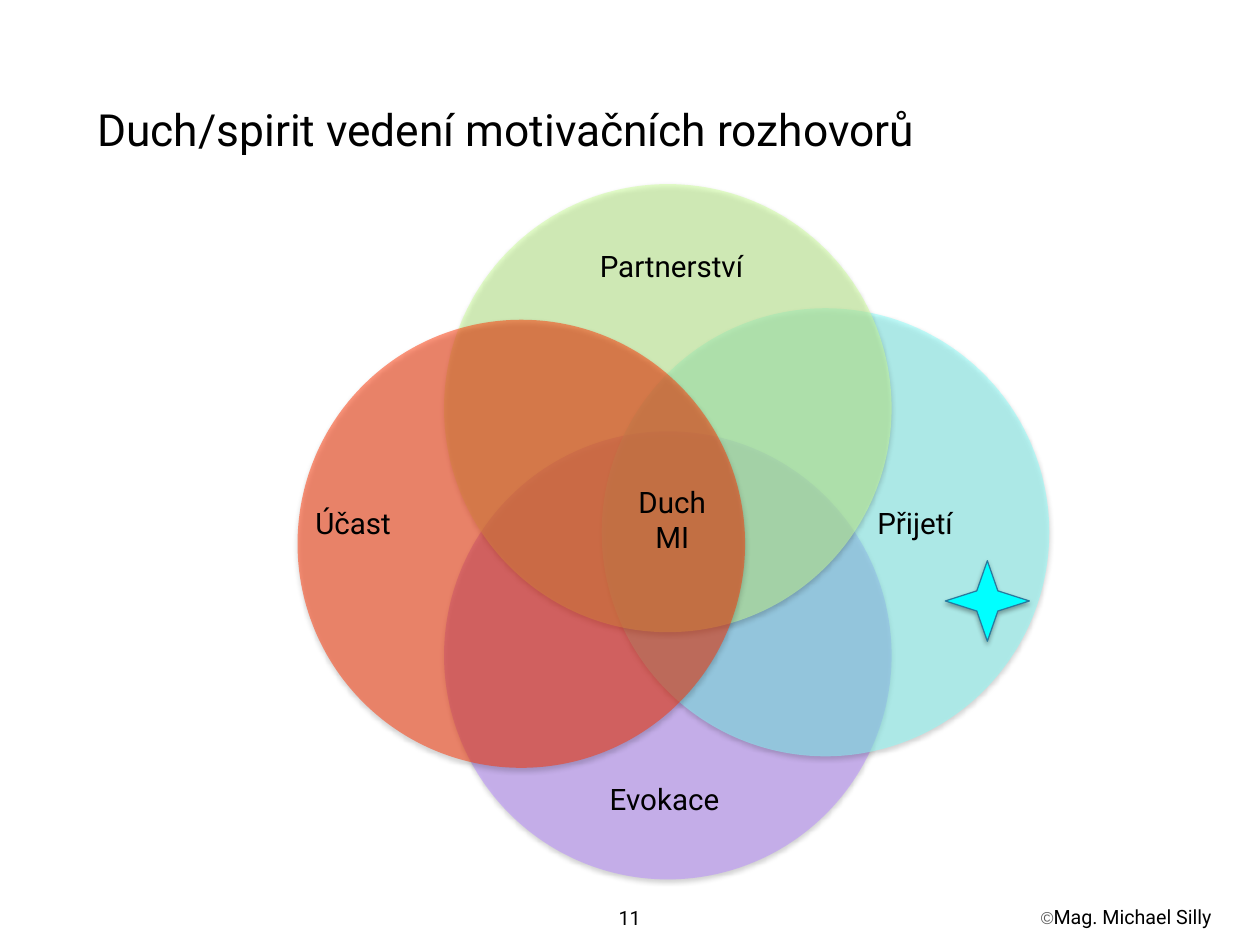
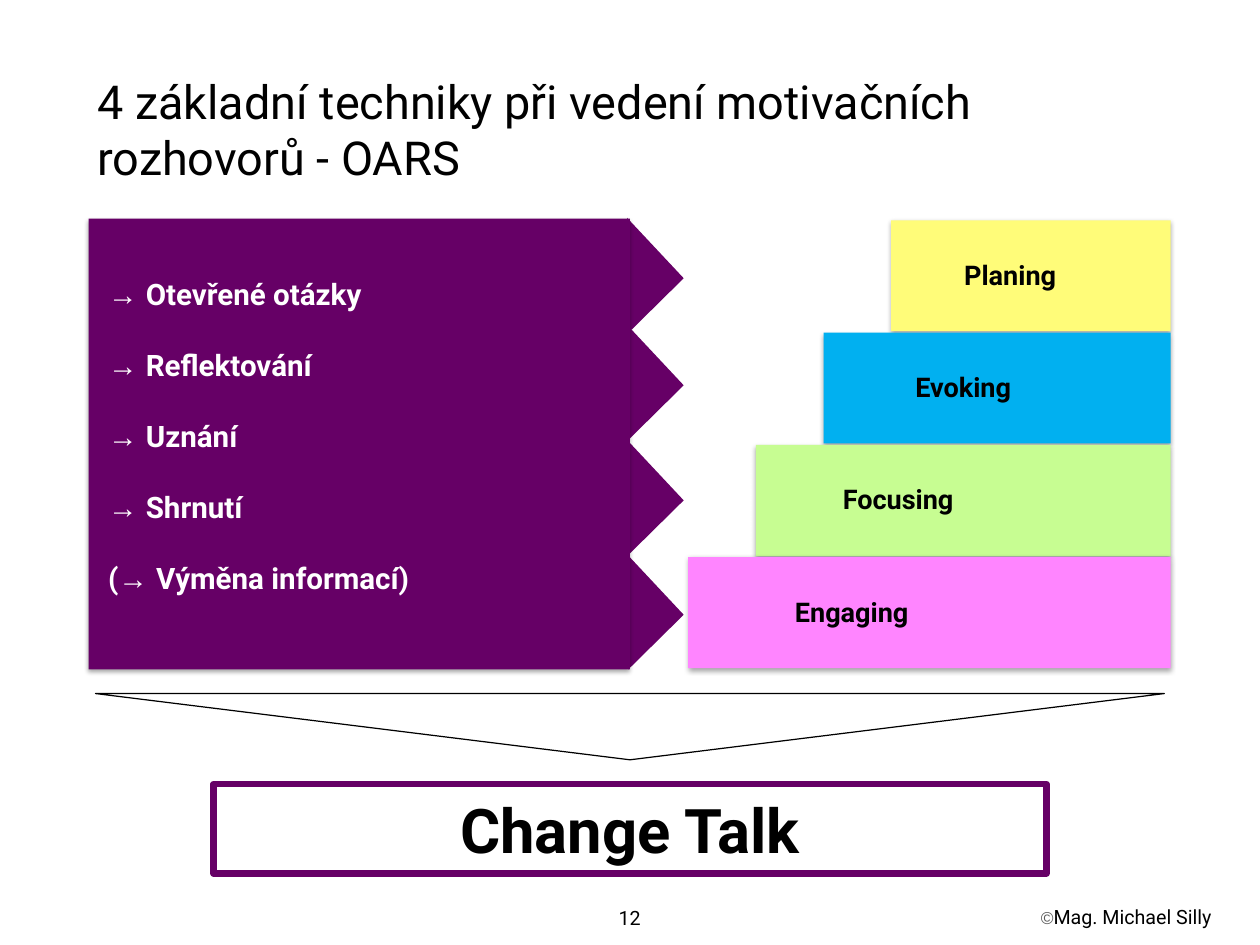
from lxml import etree
from pptx import Presentation
from pptx.dml.color import RGBColor
from pptx.enum.shapes import MSO_SHAPE
from pptx.enum.text import MSO_ANCHOR, MSO_AUTO_SIZE, PP_ALIGN
from pptx.oxml.ns import qn
from pptx.util import Cm, Pt

OVAL, RECT, STAR = MSO_SHAPE.OVAL, MSO_SHAPE.RECTANGLE, MSO_SHAPE.STAR_4_POINT
TOP, MIDDLE = MSO_ANCHOR.TOP, MSO_ANCHOR.MIDDLE
LEFT, CENTER = PP_ALIGN.LEFT, PP_ALIGN.CENTER
NO_FIT = MSO_AUTO_SIZE.NONE
TITLE_ONLY = 5

FONT, SYMBOL_FONT = "Roboto", "Arial"
BLACK = RGBColor(0x00, 0x00, 0x00)
WHITE = RGBColor(0xFF, 0xFF, 0xFF)
GREY = RGBColor(0x59, 0x59, 0x59)
PURPLE = RGBColor(0x66, 0x00, 0x66)
LILAC = RGBColor(0xB9, 0x8D, 0xFF)
AQUA = RGBColor(0x85, 0xFF, 0xFB)
LIME = RGBColor(0xCC, 0xFF, 0x99)
RED = RGBColor(0xFF, 0x33, 0x00)
CYAN = RGBColor(0x00, 0xFF, 0xFF)
STAR_EDGE = RGBColor(0x28, 0x7A, 0x9E)
YELLOW = RGBColor(0xFF, 0xFC, 0x79)
BLUE = RGBColor(0x01, 0xB0, 0xF0)
GREEN = RGBColor(0xC7, 0xFD, 0x92)
PINK = RGBColor(0xFF, 0x85, 0xFF)


def cm_all(*lengths):
    return [Cm(length) for length in lengths]


def write(frame, lines, size=24, font=FONT, color=BLACK, bold=False, align=LEFT,
          anchor=TOP, inset=0.18, wrap=True, gap=0):
    """Each line is a string or a list of (text, run format) pairs."""
    frame.auto_size = NO_FIT
    frame.word_wrap = wrap
    frame.vertical_anchor = anchor
    frame.margin_left = frame.margin_right = Cm(inset)
    frame.margin_top = frame.margin_bottom = Cm(inset)
    base = {"size": size, "font": font, "color": color, "bold": bold}
    for index, line in enumerate(lines):
        paragraph = frame.add_paragraph() if index else frame.paragraphs[0]
        paragraph.alignment = align
        paragraph.space_before = Pt(gap if index else 0)
        for text, changes in ([(line, {})] if isinstance(line, str) else line):
            look = {**base, **changes}
            run = paragraph.add_run()
            run.text = text
            run.font.size = Pt(look["size"])
            run.font.name = look["font"]
            run.font.bold = look["bold"]
            run.font.color.rgb = look["color"]


def add_label(slide, box, *lines, **look):
    write(slide.shapes.add_textbox(*cm_all(*box)).text_frame, lines, **look)


def paint(shape, fill=None, alpha=None, line=None, width=1, shadow=False):
    shape.shadow.inherit = False
    if fill is None:
        shape.fill.background()
    else:
        shape.fill.solid()
        shape.fill.fore_color.rgb = fill
    if alpha is not None:
        tint = shape._element.spPr.find(qn("a:solidFill"))[0]
        etree.SubElement(tint, qn("a:alpha"), val=str(alpha * 1000))
    if line is None:
        shape.line.fill.background()
    else:
        shape.line.color.rgb = line
        shape.line.width = Pt(width)
    if shadow:
        effects = shape._element.spPr.find(qn("a:effectLst"))
        outer = etree.SubElement(effects, qn("a:outerShdw"), blurRad=str(Pt(4)),
                                 dist=str(Pt(2)), dir="5400000", rotWithShape="0")
        shade = etree.SubElement(outer, qn("a:srgbClr"), val=str(BLACK))
        etree.SubElement(shade, qn("a:alpha"), val="35000")


def add_block(slide, kind, box, **look):
    block = slide.shapes.add_shape(kind, *cm_all(*box))
    paint(block, **look)
    return block


def add_polygon(slide, points, **look):
    corners = [cm_all(*point) for point in points]
    builder = slide.shapes.build_freeform(*corners[0], scale=1.0)
    builder.add_line_segments(corners[1:], close=True)
    paint(builder.convert_to_shape(), **look)


def add_page(prs, number, title, title_size):
    slide = prs.slides.add_slide(prs.slide_layouts[TITLE_ONLY])
    heading = slide.shapes.title
    heading.left, heading.top, heading.width, heading.height = cm_all(2.64, 0.71, 30.84, 5.99)
    write(heading.text_frame, [title], size=title_size, anchor=MIDDLE, inset=0.15)
    # Footer: credit and page number
    add_label(slide, (29.69, 25.73, 5.31, 1.09),
              [("©️", {"size": 14, "font": SYMBOL_FONT, "color": GREY}),
               ("Mag. Michael Silly", {})],
              size=16, anchor=MIDDLE, inset=0.15, wrap=False)
    add_label(slide, (17.58, 25.83, 0.94, 0.89), str(number),
              size=16, align=CENTER, inset=0.15, wrap=False)
    return slide


def build_spirit(prs):
    slide = add_page(prs, 11, "Duch/spirit vedení motivačních rozhovorů", 36)
    # Overlapping circles
    for left, top, color, alpha in ((12.73, 12.37, LILAC, 52), (17.25, 8.84, AQUA, 49),
                                    (12.73, 5.28, LIME, 51), (8.53, 9.17, RED, 50)):
        add_block(slide, OVAL, (left, top, 12.83, 12.85), fill=color, alpha=alpha, shadow=True)
    # Circle names
    add_label(slide, (16.54, 13.69, 5.46, 2.87), "Duch", "MI", align=CENTER)
    add_label(slide, (14.02, 6.93, 10.46, 2.87), "Partnerství", align=CENTER)
    for name, left, top in (("Účast", 8.86, 14.3), ("Přijetí", 24.97, 14.3),
                            ("Evokace", 17.3, 22.23)):
        add_label(slide, (left, top, 5.2, 1.63), name)
    star = add_block(slide, STAR, (27.1, 16.08, 2.41, 2.31), fill=CYAN, line=STAR_EDGE, shadow=True)
    star.adjustments[0] = 0.177


def build_techniques(prs):
    slide = add_page(prs, 12, "4 základní techniky při vedení motivačních rozhovorů - OARS", 38)
    # Staircase, from the top step down
    steps = (("Planing", YELLOW, 27.46), ("Evoking", BLUE, 26.06),
             ("Focusing", GREEN, 23.98), ("Engaging", PINK, 22.61))
    for level, (name, color, name_left) in enumerate(steps):
        left, top = 25.55 - 1.94 * level, 6.32 + 3.22 * level
        add_block(slide, RECT, (left, top, 33.56 - left, 3.18), fill=color, shadow=True)
        add_label(slide, (name_left, top + 0.91, 5, 1.3), name, size=22, bold=True)
    # Panel with teeth pointing at the steps
    for top in (6.25, 9.32, 12.62, 15.9):
        add_polygon(slide, ((17.98, top), (18.01, top + 3.3), (19.6, top + 1.73)), fill=PURPLE)
    add_block(slide, RECT, (2.54, 6.27, 15.52, 12.93), fill=PURPLE, shadow=True)
    arrow = ("→ ", {"font": SYMBOL_FONT, "bold": False})
    techniques = [[arrow, (name, {})]
                  for name in ("Otevřené otázky", "Reflektování", "Uznání", "Shrnutí")]
    add_label(slide, (2.92, 7.73, 15.1, 11.4), *techniques,
              [("(", {}), arrow, ("Výměna informací)", {})],
              color=WHITE, bold=True, gap=29)
    # Funnel to the result
    add_polygon(slide, ((18.06, 21.79), (33.38, 19.89), (2.74, 19.89)), line=BLACK)
    result = add_block(slide, RECT, (6.12, 22.48, 23.88, 2.57), line=PURPLE, width=5)
    write(result.text_frame, ["Change Talk"], size=50, bold=True, align=CENTER,
          anchor=MIDDLE, inset=0.15)


def main():
    prs = Presentation()
    prs.slide_width, prs.slide_height = cm_all(36.12, 27.1)
    build_spirit(prs)
    build_techniques(prs)
    prs.save("out.pptx")


if __name__ == "__main__":
    main()
